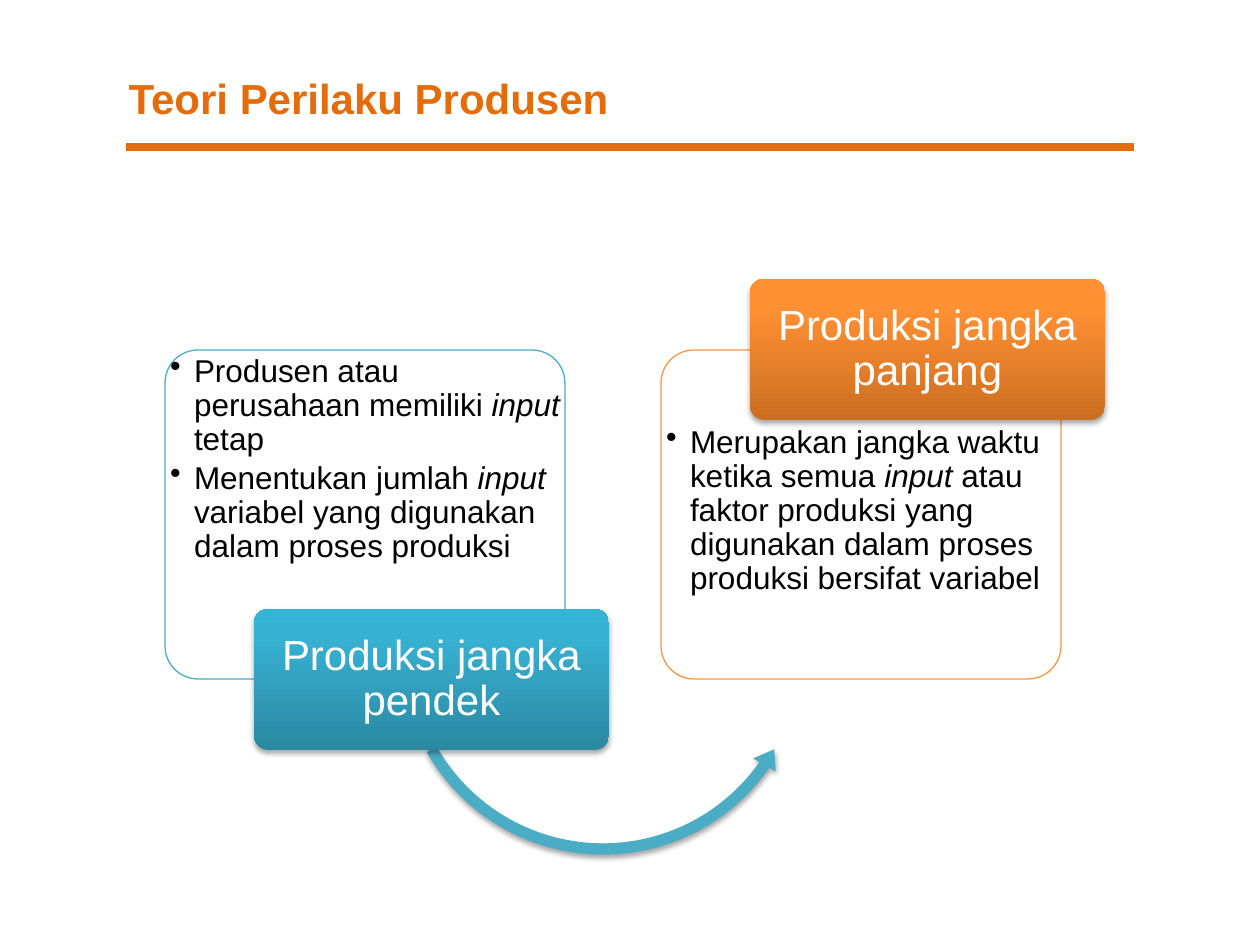
from dataclasses import dataclass

from lxml.etree import SubElement
from pptx import Presentation
from pptx.dml.color import RGBColor
from pptx.enum.shapes import MSO_CONNECTOR, MSO_SHAPE
from pptx.enum.text import MSO_ANCHOR as Anchor, PP_ALIGN as Align
from pptx.oxml.ns import qn
from pptx.util import Inches, Pt

PX_PER_INCH = 126


@dataclass(frozen=True)
class Theme:
    font: str = "Arial"
    accent: str = "E46C0A"
    teal: str = "4BACC6"
    orange: str = "F79646"
    white: str = "FFFFFF"
    black: str = "000000"
    teal_stops: tuple = ((0, "2A88A2"), (80, "37B1D2"), (100, "34B4D6"))
    orange_stops: tuple = ((0, "CC6E20"), (80, "FF9034"), (100, "FF9136"))
    heading: int = 24
    body: int = 18


THEME = Theme()


def px(n):
    return Inches(n / PX_PER_INCH)


def rgb(value):
    return RGBColor.from_string(value)


def add_text(tf, paragraphs, size=THEME.body, color=THEME.black, bold=None,
             align=Align.LEFT, anchor=Anchor.TOP, insets=None,
             spacing=None, after=0, bullet=False):
    tf.word_wrap = True
    tf.vertical_anchor = anchor
    if insets:
        across, down = map(px, insets)
        tf.margin_left = tf.margin_right = across
        tf.margin_top = tf.margin_bottom = down
    for i, runs in enumerate(paragraphs):
        p = tf.paragraphs[0] if i == 0 else tf.add_paragraph()
        p.alignment = align
        if spacing:
            p.line_spacing = spacing
        p.space_after = Pt(after)
        if bullet:
            p.level = 1
            pPr = p._p.get_or_add_pPr()
            pPr.set("marL", str(px(24)))
            pPr.set("indent", str(-px(24)))
            SubElement(pPr, qn("a:buChar"), char="•")
        for text, italic in runs:
            r = p.add_run()
            r.text = text
            r.font.name = THEME.font
            r.font.size = Pt(size)
            r.font.bold = bold
            r.font.italic = italic
            r.font.color.rgb = rgb(color)


def add_shadow(s):
    effects = s._element.spPr.find(qn("a:effectLst"))
    shadow = SubElement(effects, qn("a:outerShdw"), blurRad=str(Pt(3.1)),
                        dist=str(Pt(1.8)), dir="5400000", rotWithShape="0")
    color = SubElement(shadow, qn("a:srgbClr"), val=THEME.black)
    SubElement(color, qn("a:alpha"), val="35000")


def add_shape(slide, kind, box, adjustments):
    s = slide.shapes.add_shape(kind, *map(px, box))
    s.shadow.inherit = False
    for i, value in enumerate(adjustments):
        s.adjustments[i] = value
    return s


def add_title(slide, text):
    title = slide.shapes.title
    title.left, title.top, title.width, title.height = map(px, (116, 38, 1018, 120))
    add_text(title.text_frame, [[(text, None)]], size=THEME.heading,
             color=THEME.accent, bold=True, anchor=Anchor.MIDDLE)


def add_rule(slide, left, right, y):
    line = slide.shapes.add_connector(MSO_CONNECTOR.STRAIGHT,
                                      px(left), px(y), px(right), px(y))
    line.line.color.rgb = rgb(THEME.accent)
    line.line.width = Pt(4.5)
    SubElement(line._element.spPr, qn("a:effectLst"))


def add_panel(slide, left, body_top, color, paragraphs):
    s = add_shape(slide, MSO_SHAPE.ROUNDED_RECTANGLE, (left, 350, 400, 329), [0.1])
    s.fill.solid()
    s.fill.fore_color.rgb = rgb(THEME.white)
    white = s._element.spPr.find(qn("a:solidFill"))[0]
    SubElement(white, qn("a:alpha"), val="90000")
    s.line.color.rgb = rgb(color)
    s.line.width = Pt(0.75)
    body = slide.shapes.add_textbox(*map(px, (left, body_top, 400, 258)))
    add_text(body.text_frame, paragraphs, insets=(5, 5), spacing=0.9,
             after=3, bullet=True)


def add_label(slide, left, top, stops, text):
    s = add_shape(slide, MSO_SHAPE.ROUNDED_RECTANGLE, (left, top, 355, 141), [0.1])
    s.fill.gradient()
    s.fill.gradient_angle = 90
    stop_list = s._element.spPr.find(qn("a:gradFill")).find(qn("a:gsLst"))
    stop_list.clear()
    for position, color in stops:
        stop = SubElement(stop_list, qn("a:gs"), pos=str(position * 1000))
        SubElement(stop, qn("a:srgbClr"), val=color)
    s.line.fill.background()
    add_shadow(s)
    add_text(s.text_frame, [[(text, None)]], size=THEME.heading,
             color=THEME.white, align=Align.CENTER, anchor=Anchor.MIDDLE,
             insets=(6, 4), spacing=0.9)


def add_curved_arrow(slide):
    s = add_shape(slide, MSO_SHAPE.LEFT_CIRCULAR_ARROW, (393, 442, 420, 420),
                  [0.027, 3.231, 20.986, 90.245, 0.031])
    s.fill.solid()
    s.fill.fore_color.rgb = rgb(THEME.teal)
    s.line.fill.background()
    add_shadow(s)


def main():
    prs = Presentation()
    prs.slide_width, prs.slide_height = Inches(10), Inches(7.5)
    slide = prs.slides.add_slide(prs.slide_layouts[5])
    add_title(slide, "Teori Perilaku Produsen")
    add_rule(slide, 126, 1134, 147)

    add_panel(slide, 165, 350, THEME.teal, [
        [("Produsen atau perusahaan memiliki ", None), ("input ", True),
         ("tetap", False)],
        [("Menentukan jumlah ", None), ("input ", True),
         ("variabel yang digunakan dalam proses produksi", False)],
    ])
    add_curved_arrow(slide)
    add_label(slide, 254, 609, THEME.teal_stops, "Produksi jangka pendek")

    add_panel(slide, 661, 421, THEME.orange, [
        [("Merupakan jangka waktu ketika semua ", None), ("input ", True),
         ("atau faktor produksi yang digunakan dalam proses produksi "
          "bersifat variabel", False)],
    ])
    add_label(slide, 750, 279, THEME.orange_stops, "Produksi jangka panjang")
    prs.save("out.pptx")


if __name__ == "__main__":
    main()
